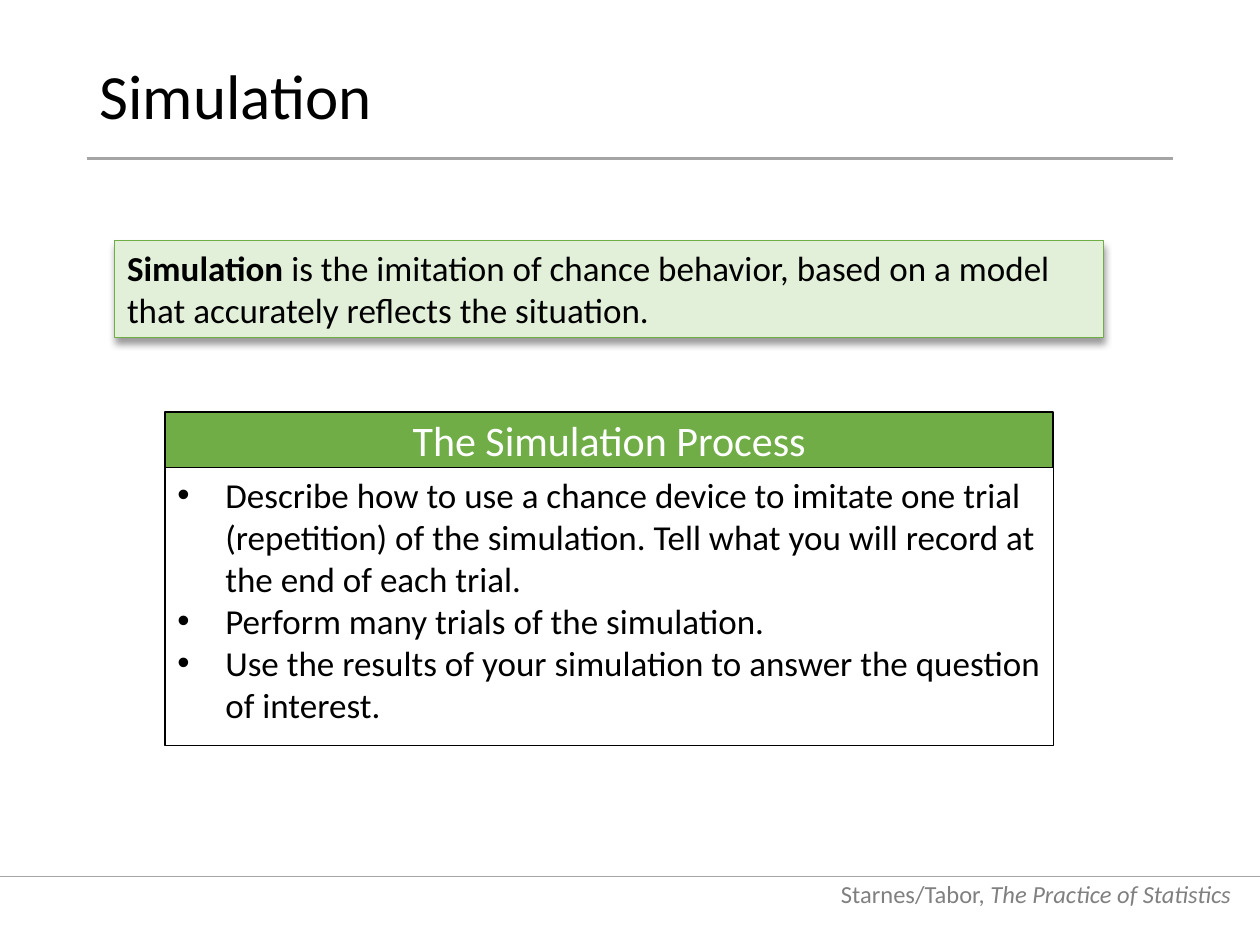
import pptx
import pptx.util
import pptx.dml.color
import pptx.enum.shapes
import pptx.enum.text
import pptx.oxml
import pptx.oxml.ns
from lxml import etree

Inches = pptx.util.Inches
Pt = pptx.util.Pt
RGB = pptx.dml.color.RGBColor
ALIGN = pptx.enum.text.PP_ALIGN
ANCHOR = pptx.enum.text.MSO_ANCHOR
qn = pptx.oxml.ns.qn

BLACK = RGB(0x00, 0x00, 0x00)
WHITE = RGB(0xFF, 0xFF, 0xFF)
GREEN = RGB(0x70, 0xAD, 0x47)
PALE_GREEN = RGB(0xE2, 0xF0, 0xD9)
RULE_GRAY = RGB(0xA5, 0xA5, 0xA5)
TEXT_GRAY = RGB(0x80, 0x80, 0x80)
FONT = "Calibri"

STEPS = [
    "Describe how to use a chance device to imitate one trial (repetition) of "
    "the simulation. Tell what you will record at the end of each trial.",
    "Perform many trials of the simulation.",
    "Use the results of your simulation to answer the question of interest.",
]


def add_bullet(p, indent):
    pPr = p._p.get_or_add_pPr()
    pPr.set("marL", str(Inches(indent)))
    pPr.set("indent", str(-Inches(indent)))
    etree.SubElement(pPr, qn("a:buFont")).set("typeface", "Arial")
    etree.SubElement(pPr, qn("a:buChar")).set("char", "•")


def write(tf, paragraphs, size=20, color=BLACK, align=ALIGN.LEFT,
          anchor=ANCHOR.TOP, bullet_indent=None, spacing=None):
    """Each paragraph is a list of (text, style), style being "", "b" or "i"."""
    tf.word_wrap = True
    tf.auto_size = pptx.enum.text.MSO_AUTO_SIZE.NONE
    tf.vertical_anchor = anchor
    for i, runs in enumerate(paragraphs):
        p = tf.paragraphs[0] if i == 0 else tf.add_paragraph()
        p.alignment = align
        if spacing:
            p.line_spacing = spacing
        if bullet_indent:
            add_bullet(p, bullet_indent)
        for text, style in runs:
            r = p.add_run()
            r.text = text
            r.font.name = FONT
            r.font.size = Pt(size)
            r.font.color.rgb = color
            r.font.bold = style == "b"
            r.font.italic = style == "i"


def add_box(s, left, top, width, height, fill, line, weight):
    sp = s.shapes.add_shape(pptx.enum.shapes.MSO_SHAPE.RECTANGLE, Inches(left),
                            Inches(top), Inches(width), Inches(height))
    sp.shadow.inherit = False
    if fill is None:
        sp.fill.background()
    else:
        sp.fill.solid()
        sp.fill.fore_color.rgb = fill
    sp.line.color.rgb = line
    sp.line.width = Pt(weight)
    return sp


def add_rule(s, left, right, y, weight):
    rule = s.shapes.add_connector(pptx.enum.shapes.MSO_CONNECTOR.STRAIGHT,
                                  Inches(left), Inches(y), Inches(right), Inches(y))
    rule.line.color.rgb = RULE_GRAY
    rule.line.width = Pt(weight)
    etree.SubElement(rule._element.spPr, qn("a:effectLst"))


def add_drop_shadow(sp):
    effects = sp._element.spPr.find(qn("a:effectLst"))
    shadow = etree.SubElement(effects, qn("a:outerShdw"), blurRad=str(Pt(4)),
                              dist=str(Pt(3)), dir="5400000", rotWithShape="0")
    color = etree.SubElement(shadow, qn("a:srgbClr"), val=str(BLACK))
    etree.SubElement(color, qn("a:alpha"), val="40000")


def add_footer(s, left, top, width, height):
    add_rule(s, 0, 10, top + 0.1, 0.5)
    sp = s.shapes.add_textbox(Inches(left), Inches(top), Inches(width), Inches(height))
    write(sp.text_frame,
          [[("Starnes/Tabor,", ""), (" The Practice of Statistics", "i")]],
          size=14, color=TEXT_GRAY, align=ALIGN.RIGHT, anchor=ANCHOR.BOTTOM)


def add_title(s, left, top, width, height):
    add_rule(s, left, left + width, top + height + 0.08, 1.5)
    sp = s.shapes.title
    sp.left, sp.top = Inches(left), Inches(top)
    sp.width, sp.height = Inches(width), Inches(height)
    write(sp.text_frame, [[("Simulation", "")]], size=36,
          anchor=ANCHOR.MIDDLE, spacing=0.9)


def add_process(s, left, top, width, height, header=0.44):
    # Steps below, header bar on top
    body = add_box(s, left, top + header, width, height - header, None, BLACK, 0.75)
    write(body.text_frame, [[(step, "")] for step in STEPS], bullet_indent=0.38)
    bar = add_box(s, left, top, width, header, GREEN, BLACK, 1)
    write(bar.text_frame, [[("The Simulation Process", "")]], size=24, color=WHITE,
          align=ALIGN.CENTER, anchor=ANCHOR.MIDDLE)


def add_definition(s, left, top, width, height):
    sp = add_box(s, left, top, width, height, PALE_GREEN, GREEN, 0.5)
    add_drop_shadow(sp)
    write(sp.text_frame, [[
        ("Simulation ", "b"),
        ("is the imitation of chance behavior, based on a model that "
         "accurately reflects the situation.", ""),
    ]])


def main():
    prs = pptx.Presentation()
    prs.slide_width, prs.slide_height = Inches(10), Inches(7.5)
    s = prs.slides.add_slide(prs.slide_layouts[5])
    add_footer(s, 6.47, 6.86, 3.4, 0.4)
    add_title(s, 0.69, 0.4, 8.62, 0.78)
    add_process(s, 1.31, 3.27, 7.05, 2.65)
    add_definition(s, 0.91, 1.91, 7.85, 0.77)
    prs.save("out.pptx")


if __name__ == "__main__":
    main()
